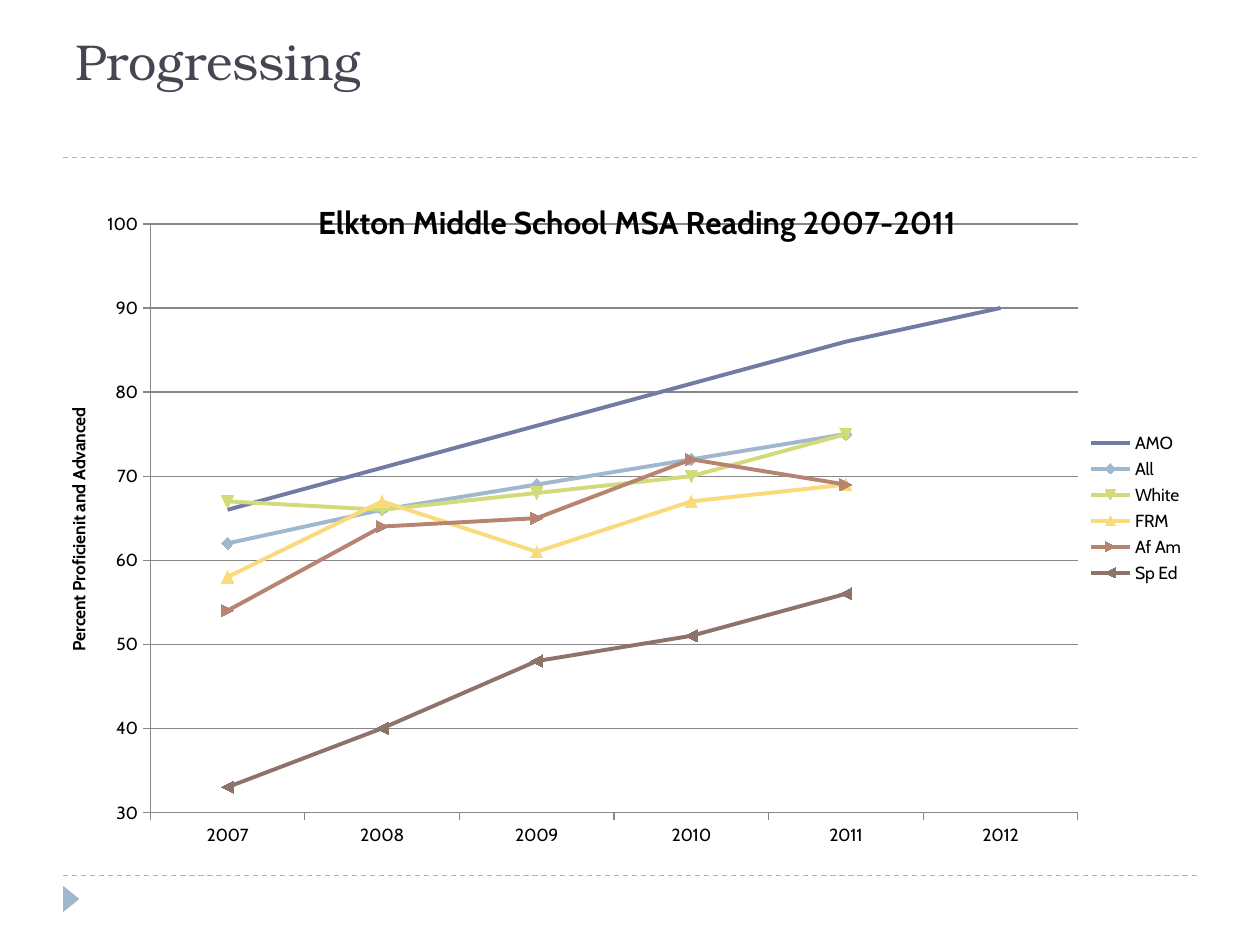
from lxml import etree
from pptx import Presentation, util as u
from pptx.chart.data import CategoryChartData
from pptx.dml.color import RGBColor
from pptx.enum import chart as ch, dml, shapes, text
from pptx.oxml import parse_xml
from pptx.oxml.ns import nsdecls, qn

HUES = {"ink": "464653", "text": "000000", "rule": "9FB8CD", "axis": "868686", "back": "FFFFFF"}
SERIF, SANS = "TeX Gyre Bonum", "Cabin"
HEAD = "Progressing"
TITLE = "Elkton Middle School MSA Reading 2007-2011"
SIDE = "Percent Proficienit and Advanced"
YEARS = ["2007", "2008", "2009", "2010", "2011", "2012"]
LINES = [
    ("AMO", "727CA3", [66, 71, 76, 81, 86, 90]),
    ("All", "9FB8CD", [62, 66, 69, 72, 75, None]),
    ("White", "D2DA7A", [67, 66, 68, 70, 75, None]),
    ("FRM", "FADA7A", [58, 67, 61, 67, 69, None]),
    ("Af Am", "B88472", [54, 64, 65, 72, 69, None]),
    ("Sp Ed", "8E736A", [33, 40, 48, 51, 56, None]),
]
RULES = [1.25, 6.95]


def tint(hue):
    return RGBColor.from_string(hue)


def style(font, size=10, name=SANS, hue="text", bold=False):
    font.size, font.name, font.bold = u.Pt(size), name, bold
    font.color.rgb = tint(HUES[hue])


def put(frame, words, **form):
    para = frame.paragraphs[0]
    run = para.add_run()
    run.text = words
    style(run.font, **form)


def place(node, spot, **parts):
    for old in node.findall(qn("c:layout")):
        node.remove(old)
    tags = "".join(f'<c:{k} val="{v}"/>' for k, v in parts.items())
    node.insert(spot, parse_xml(
        f'<c:layout {nsdecls("c")}><c:manualLayout>{tags}</c:manualLayout></c:layout>'))


def rule(slide, top):
    line = slide.shapes.add_connector(
        shapes.MSO_CONNECTOR.STRAIGHT,
        u.Inches(0.5), u.Inches(top), u.Inches(9.5), u.Inches(top))
    line.line.color.rgb = tint(HUES["rule"])
    line.line.width = u.Pt(0.75)
    line.line.dash_style = dml.MSO_LINE.DASH
    etree.SubElement(line._element.spPr, qn("a:effectLst"))


def heading(slide):
    box = slide.shapes.add_textbox(u.Inches(0.5), u.Inches(0.17), u.Inches(9), u.Inches(1.08))
    frame = box.text_frame
    frame.word_wrap = True
    frame.margin_top = u.Inches(0.07)
    frame.vertical_anchor = text.MSO_ANCHOR.TOP
    put(frame, HEAD, size=28.8, name=SERIF, hue="ink")


def arrow(slide):
    mark = slide.shapes.add_shape(
        shapes.MSO_SHAPE.ISOSCELES_TRIANGLE,
        u.Inches(0.46), u.Inches(7.07), u.Inches(0.21), u.Inches(0.13))
    mark.rotation = 90
    mark.shadow.inherit = False
    mark.fill.solid()
    mark.fill.fore_color.rgb = tint(HUES["rule"])
    mark.line.fill.background()


def graph(slide):
    data = CategoryChartData()
    data.categories = YEARS
    for name, _, vals in LINES:
        data.add_series(name, vals)
    chart = slide.shapes.add_chart(
        ch.XL_CHART_TYPE.LINE_MARKERS, u.Inches(0.5), u.Inches(1.33),
        u.Inches(9), u.Inches(5.4), data).chart
    style(chart.font)
    chart.plots[0].vary_by_categories = False

    chart.has_title = True
    put(chart.chart_title.text_frame, TITLE, size=18, bold=True)
    place(chart.chart_title._element, 1, xMode="edge", yMode="edge", x=0.22, y=0.04)
    place(chart._chartSpace.chart.plotArea, 0, layoutTarget="inner", xMode="edge",
          yMode="edge", x=0.077, y=0.083, w=0.818, h=0.865)
    chart.has_legend = True
    chart.legend.position = ch.XL_LEGEND_POSITION.RIGHT
    chart.legend.include_in_layout = False
    style(chart.legend.font)

    rise = chart.value_axis
    rise.minimum_scale, rise.maximum_scale, rise.major_unit = 30, 100, 10
    rise.has_major_gridlines = True
    rise.has_title = True
    put(rise.axis_title.text_frame, SIDE, bold=True)
    for axis in (rise, chart.category_axis):
        axis.major_tick_mark = ch.XL_TICK_MARK.OUTSIDE
        axis.format.line.color.rgb = tint(HUES["axis"])
        style(axis.tick_labels.font)
    rise.major_gridlines.format.line.color.rgb = tint(HUES["axis"])

    for line, (name, hue, _) in zip(chart.plots[0].series, LINES):
        line.smooth = False
        line.format.line.width = u.Pt(2.25)
        line.format.line.color.rgb = tint(hue)
        mark = line.marker
        if name == "AMO":
            mark.style = ch.XL_MARKER_STYLE.NONE
            continue
        mark.style = ch.XL_MARKER_STYLE.AUTOMATIC
        mark.size = 7
        mark.format.fill.solid()
        mark.format.fill.fore_color.rgb = tint(hue)
        mark.format.line.color.rgb = tint(hue)


def main():
    deck = Presentation()
    deck.slide_width, deck.slide_height = u.Inches(10), u.Inches(7.5)
    slide = deck.slides.add_slide(deck.slide_layouts[6])
    slide.background.fill.solid()
    slide.background.fill.fore_color.rgb = tint(HUES["back"])
    for top in RULES:
        rule(slide, top)
    arrow(slide)
    heading(slide)
    graph(slide)
    deck.save("out.pptx")


if __name__ == "__main__":
    main()
